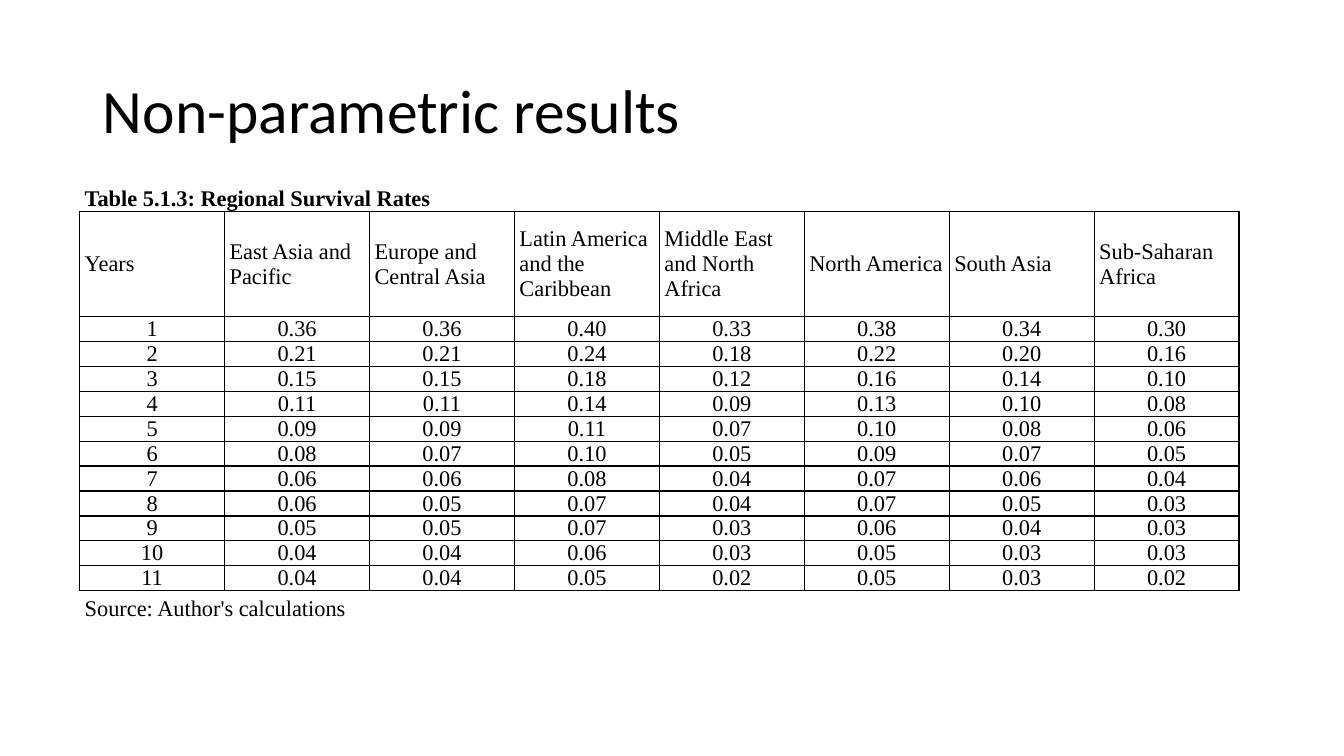
"""Build the slide with the table of regional survival rates."""
from lxml.etree import SubElement
from pptx import Presentation
from pptx.dml.color import RGBColor
from pptx.enum.text import MSO_ANCHOR, PP_ALIGN
from pptx.oxml.ns import qn
from pptx.util import Inches, Pt

BLACK = "000000"
REGIONS = ["East Asia and Pacific", "Europe and Central Asia",
           "Latin America and the Caribbean", "Middle East and North Africa",
           "North America", "South Asia", "Sub-Saharan Africa"]
RATES = [
    "0.36 0.36 0.40 0.33 0.38 0.34 0.30",
    "0.21 0.21 0.24 0.18 0.22 0.20 0.16",
    "0.15 0.15 0.18 0.12 0.16 0.14 0.10",
    "0.11 0.11 0.14 0.09 0.13 0.10 0.08",
    "0.09 0.09 0.11 0.07 0.10 0.08 0.06",
    "0.08 0.07 0.10 0.05 0.09 0.07 0.05",
    "0.06 0.06 0.08 0.04 0.07 0.06 0.04",
    "0.06 0.05 0.07 0.04 0.07 0.05 0.03",
    "0.05 0.05 0.07 0.03 0.06 0.04 0.03",
    "0.04 0.04 0.06 0.03 0.05 0.03 0.03",
    "0.04 0.04 0.05 0.02 0.05 0.03 0.02",
]


def write(tf, text, size=16, font="Times New Roman", color=BLACK, bold=False,
          align=PP_ALIGN.LEFT, spacing=1.0):
    p = tf.paragraphs[0]
    p.alignment = align
    p.line_spacing = spacing
    r = p.add_run()
    r.text = text
    r.font.size = Pt(size)
    r.font.name = font
    r.font.bold = bold
    r.font.color.rgb = RGBColor.from_string(color)


def set_borders(cell, sides, color=BLACK):
    tc_pr = cell._tc.get_or_add_tcPr()
    for i, side in enumerate("LRTB"):
        ln = SubElement(tc_pr, qn(f"a:ln{side}"), w=str(Pt(1)))
        if side in sides:
            fill = SubElement(ln, qn("a:solidFill"))
            SubElement(fill, qn("a:srgbClr"), val=color)
        else:
            SubElement(ln, qn("a:noFill"))
        tc_pr.insert(i, ln)


prs = Presentation()
prs.slide_width, prs.slide_height = Inches(13.33), Inches(7.5)
s = prs.slides.add_slide(prs.slide_layouts[5])

title = s.shapes.title
title.left, title.top = Inches(0.92), Inches(0.4)
title.width, title.height = Inches(11.5), Inches(1.45)
title.text_frame.vertical_anchor = MSO_ANCHOR.MIDDLE
write(title.text_frame, "Non-parametric results", size=44, font="Calibri", spacing=0.9)

rows = [["Years"] + REGIONS]
rows += [[str(year)] + line.split() for year, line in enumerate(RATES, 1)]
n_rows, n_cols = len(rows) + 2, len(rows[0])
last = n_rows - 1

table = s.shapes.add_table(n_rows, n_cols, Inches(0.79), Inches(1.73),
                           Inches(11.5), Inches(3.77)).table
table.first_row = table.horz_banding = False
for col in table.columns:
    col.width = Inches(11.5 / n_cols)
for i, row in enumerate(table.rows):
    row.height = Inches(1.04 if i == 1 else 0.21)
    for cell in row.cells:
        cell.margin_left = cell.margin_right = Inches(0.05)
        cell.margin_top = cell.margin_bottom = 0
        cell.vertical_anchor = MSO_ANCHOR.BOTTOM if i == last else MSO_ANCHOR.MIDDLE
        cell.fill.background()
        set_borders(cell, {0: "B", last: "T"}.get(i, "LRTB"))

table.cell(0, 0).merge(table.cell(0, n_cols - 1))
write(table.cell(0, 0).text_frame, "Table 5.1.3: Regional Survival Rates",
      bold=True, spacing=1.5)
for i, values in enumerate(rows, 1):
    for j, value in enumerate(values):
        write(table.cell(i, j).text_frame, value,
              align=PP_ALIGN.LEFT if i == 1 else PP_ALIGN.CENTER)
table.cell(last, 0).merge(table.cell(last, 2))
write(table.cell(last, 0).text_frame, "Source: Author's calculations")

prs.save("out.pptx")
